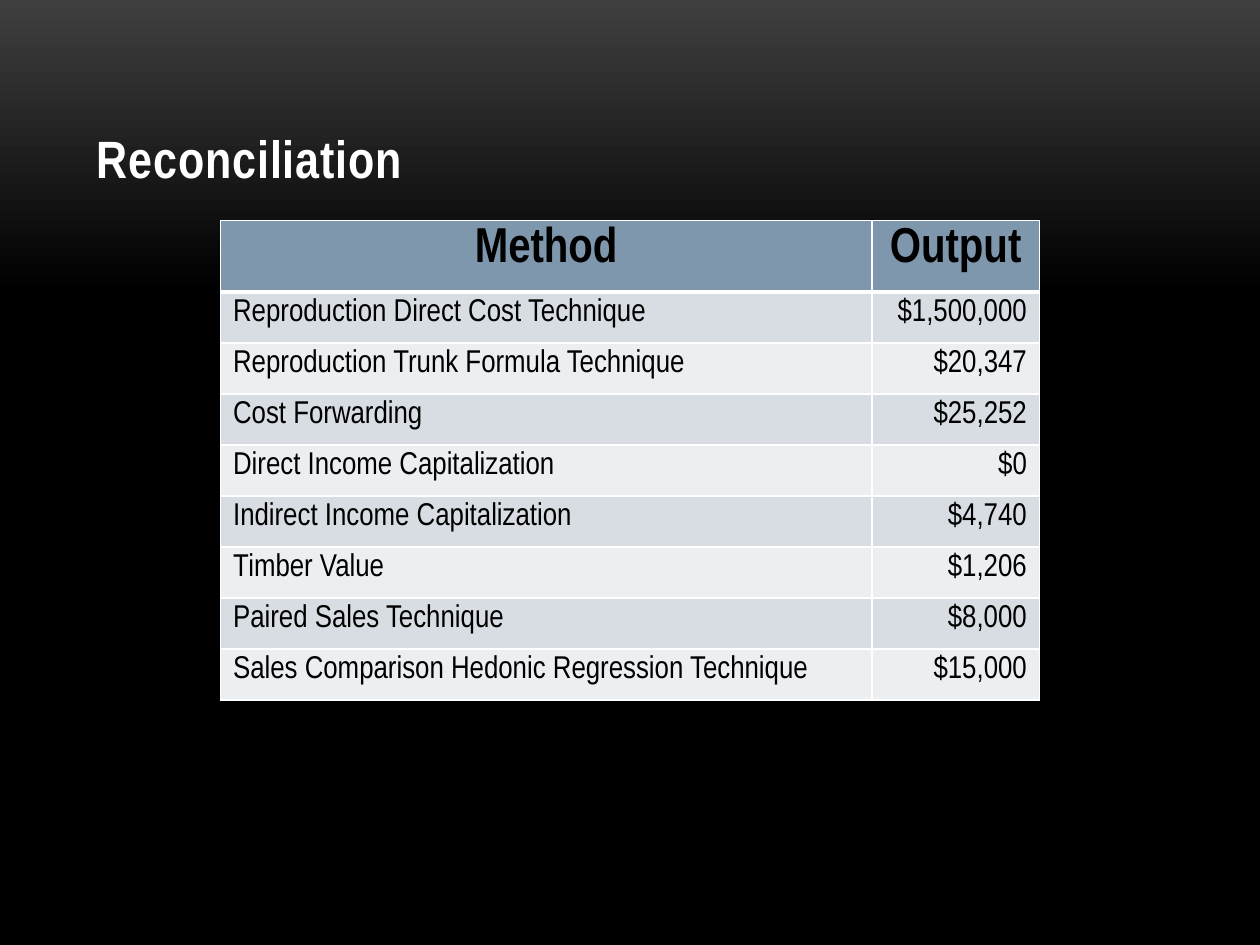
from lxml import etree
from pptx import Presentation
from pptx.dml.color import RGBColor
from pptx.enum.text import MSO_ANCHOR, PP_ALIGN
from pptx.oxml.ns import qn
from pptx.util import Inches, Pt

COLORS = {
    "glow": "3F3F3F",
    "black": "000000",
    "white": "FFFFFF",
    "header": "7E97AD",
    "odd": "D8DDE3",
    "even": "ECEFF1",
}
FONT = "Arial Narrow"
ROWS = [
    ("Method", "Output"),
    ("Reproduction Direct Cost Technique", "$1,500,000"),
    ("Reproduction Trunk Formula Technique", "$20,347"),
    ("Cost Forwarding", "$25,252"),
    ("Direct Income Capitalization", "$0"),
    ("Indirect Income Capitalization", "$4,740"),
    ("Timber Value", "$1,206"),
    ("Paired Sales Technique", "$8,000"),
    ("Sales Comparison Hedonic Regression Technique", "$15,000"),
]


def set_font(para, size, color, bold):
    para.font.name = FONT
    para.font.size = Pt(size)
    para.font.bold = bold
    para.font.color.rgb = RGBColor.from_string(COLORS[color])


def add_borders(cell, bottom_width, top_width):
    """Draw white lines on all four sides; call before the cell gets its fill."""
    properties = cell._tc.get_or_add_tcPr()
    widths = {"a:lnL": 1, "a:lnR": 1, "a:lnT": top_width, "a:lnB": bottom_width}
    for side, width in widths.items():
        line = etree.SubElement(properties, qn(side), w=str(Pt(width)))
        fill = etree.SubElement(line, qn("a:solidFill"))
        etree.SubElement(fill, qn("a:srgbClr"), val=COLORS["white"])


deck = Presentation()
deck.slide_width, deck.slide_height = Inches(10), Inches(7.5)
page = deck.slides.add_slide(deck.slide_layouts[6])

# Background: grey at the top fading to black
backdrop = page.background.fill
backdrop.gradient()
backdrop.gradient_angle = 270
for stop, color, position in zip(backdrop.gradient_stops, ("glow", "black"), (0, 0.31)):
    stop.color.rgb = RGBColor.from_string(COLORS[color])
    stop.position = position

# Title
title = page.shapes.add_textbox(Inches(0.67), Inches(0.3), Inches(8.67), Inches(1.25))
title.text_frame.word_wrap = True
title.text_frame.vertical_anchor = MSO_ANCHOR.BOTTOM
para = title.text_frame.paragraphs[0]
span = para.add_run()
span.text = "Reconciliation"
set_font(para, 30, "white", True)
span.font._element.set("spc", "50")

# Table of methods and their outputs
table = page.shapes.add_table(
    len(ROWS), 2, Inches(1.75), Inches(1.75), Inches(6.5), Inches(3.7)
).table
for column, width in zip(table.columns, (5.17, 1.33)):
    column.width = Inches(width)

for row_index, texts in enumerate(ROWS):
    is_header = row_index == 0
    table.rows[row_index].height = Inches(0.46 if is_header else 0.405)
    band = "header" if is_header else ("even", "odd")[row_index % 2]
    for column_index, text in enumerate(texts):
        cell = table.cell(row_index, column_index)
        add_borders(cell, 3 if is_header else 1, 3 if row_index == 1 else 1)
        cell.fill.solid()
        cell.fill.fore_color.rgb = RGBColor.from_string(COLORS[band])
        cell.margin_top = cell.margin_bottom = Inches(0.05)
        cell.text = text
        para = cell.text_frame.paragraphs[0]
        set_font(para, 28 if is_header else 18, "black", is_header)
        if is_header:
            para.alignment = PP_ALIGN.CENTER
        else:
            para.alignment = (PP_ALIGN.LEFT, PP_ALIGN.RIGHT)[column_index]

deck.save("out.pptx")
